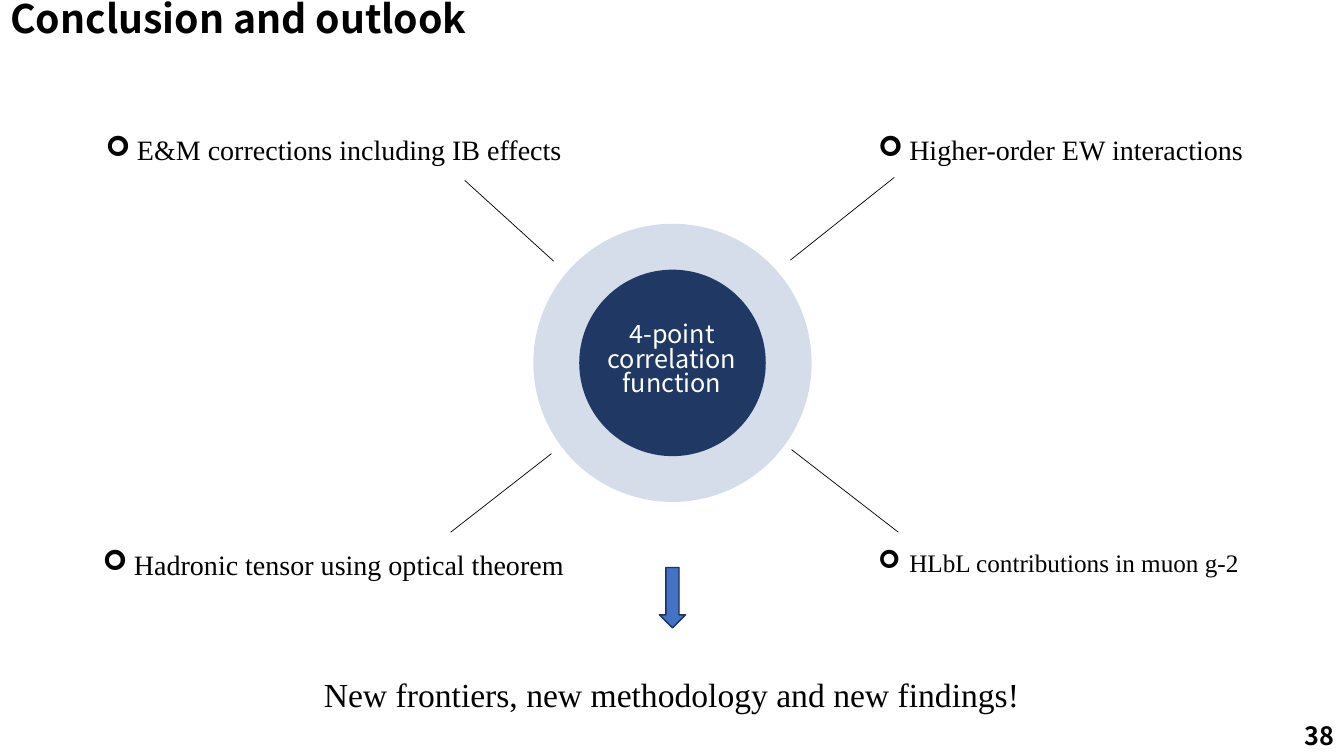
from lxml import etree
from pptx import Presentation
from pptx.dml.color import RGBColor
from pptx.enum.shapes import MSO_CONNECTOR, MSO_SHAPE
from pptx.enum.text import MSO_ANCHOR, PP_ALIGN
from pptx.oxml.ns import qn
from pptx.util import Pt

LEFT, CENTER, RIGHT = PP_ALIGN.LEFT, PP_ALIGN.CENTER, PP_ALIGN.RIGHT
TOP, MIDDLE = MSO_ANCHOR.TOP, MSO_ANCHOR.MIDDLE
OVAL, DOWN_ARROW = MSO_SHAPE.OVAL, MSO_SHAPE.DOWN_ARROW
STRAIGHT = MSO_CONNECTOR.STRAIGHT
SANS, SERIF = "Noto Sans CJK SC", "Times New Roman"

# Content: lengths in px, 100 px to the inch
TITLE = "Conclusion and outlook"
HUB = "4-point correlation function"
MESSAGE = "New frontiers, new methodology and new findings!"
PAGE = "38"
HUB_CENTER = (667, 360)
RINGS = [(276, "2F5597", 20), (185, "203864", 100)]  # diameter, colour, opacity %
TOPICS = [  # text, box, size, line from hub, line to topic
    ("E&M corrections including IB effects", (95, 127, 476, 44), 20, (549, 259), (461, 179)),
    ("Higher-order EW interactions", (861, 127, 385, 44), 20, (784, 258), (887, 176)),
    ("Hadronic tensor using optical theorem", (92, 538, 481, 44), 20, (547, 450), (447, 528)),
    ("HLbL contributions in muon g-2", (861, 538, 382, 40), 18, (785, 446), (891, 528)),
]
BULLET, INDENT = "➢", 31


def px(n):
    return int(n * 9144)


def color(value):
    return RGBColor.from_string(value)


def fill_text(shape, text, size, font=SERIF, hex_color="000000", bold=False,
              align=LEFT, anchor=TOP, wrap=True, spacing=None, bullet=False):
    tf = shape.text_frame
    tf.word_wrap, tf.vertical_anchor = wrap, anchor
    p = tf.paragraphs[0]
    if bullet:
        pPr = p._p.get_or_add_pPr()
        pPr.set("marL", str(px(INDENT)))
        pPr.set("indent", str(-px(INDENT)))
        etree.SubElement(pPr, qn("a:buFont"), typeface="Wingdings")
        etree.SubElement(pPr, qn("a:buChar"), char=BULLET)
    p.alignment = align
    if spacing:
        p.line_spacing = spacing
    r = p.add_run()
    r.text = text
    for name, value in dict(name=font, size=Pt(size), bold=bold).items():
        setattr(r.font, name, value)
    r.font.color.rgb = color(hex_color)
    etree.SubElement(r.font._element, qn("a:ea"), typeface=font)


def add_text(box, text, size, **style):
    fill_text(s.shapes.add_textbox(*map(px, box)), text, size, **style)


def add_solid(kind, box, fill, opacity=100):
    shape = s.shapes.add_shape(kind, *map(px, box))
    shape.shadow.inherit = False
    shape.fill.solid()
    shape.fill.fore_color.rgb = color(fill)
    shape.line.fill.background()
    if opacity < 100:
        clr = shape._element.spPr.find(qn("a:solidFill"))[0]
        etree.SubElement(clr, qn("a:alpha"), val=str(opacity * 1000))
    return shape


prs = Presentation()
prs.slide_width, prs.slide_height = px(1333), px(750)
s = prs.slides.add_slide(prs.slide_layouts[5])

# Title
title = s.shapes.title
title.left, title.top, title.width, title.height = map(px, (0, 0, 1150, 71))
title.text_frame.margin_top = 0
fill_text(title, TITLE, 28, font=SANS, bold=True, spacing=0.9)

# Hub: two concentric circles with a label
cx, cy = HUB_CENTER
for d, fill, opacity in RINGS:
    add_solid(OVAL, (cx - d / 2, cy - d / 2, d, d), fill, opacity)
add_text((589, 316, 155, 101), HUB, 18, font=SANS, hex_color="FFFFFF",
         align=CENTER, spacing=0.82)

# Topics and the lines that join them to the hub
for text, box, size, start, end in TOPICS:
    add_text(box, text, size, wrap=False, bullet=True)
    line = s.shapes.add_connector(STRAIGHT, *map(px, start + end))
    line.line.color.rgb = color("000000")
    line.line.width = Pt(0.5)
    etree.SubElement(line._element.spPr, qn("a:effectLst"))

# Closing message with its arrow
arrow = add_solid(DOWN_ARROW, (654, 563, 26, 60), "4472C4")
arrow.line.color.rgb = color("1E3256")
arrow.line.width = Pt(1)
add_text((278, 664, 776, 50), MESSAGE, 24, align=CENTER)

# Page number
add_text((1033, 710, 300, 40), PAGE, 18, font=SANS, bold=True, align=RIGHT, anchor=MIDDLE)

prs.save("out.pptx")
